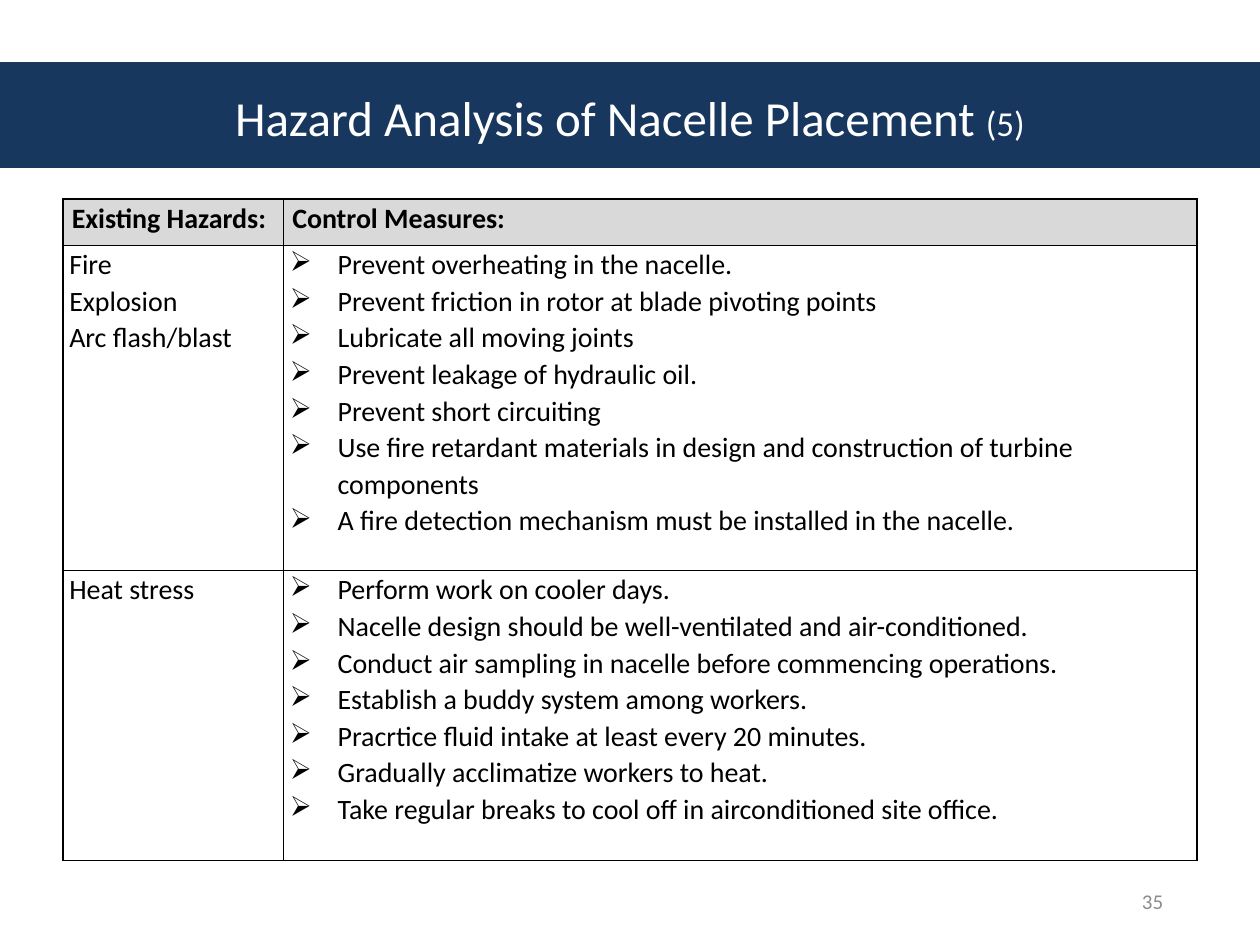
from dataclasses import dataclass

from lxml import etree
from pptx import Presentation
from pptx.dml.color import RGBColor
from pptx.enum.shapes import MSO_SHAPE
from pptx.enum.text import MSO_ANCHOR, PP_ALIGN
from pptx.oxml.ns import qn
from pptx.util import Inches, Pt

RECT = MSO_SHAPE.RECTANGLE
MIDDLE = MSO_ANCHOR.MIDDLE
LEFT, CENTER, RIGHT = PP_ALIGN.LEFT, PP_ALIGN.CENTER, PP_ALIGN.RIGHT

FONT = "Calibri"
COLORS = {
    "navy": "17375E",
    "white": "FFFFFF",
    "black": "000000",
    "header": "D9D9D9",
    "number": "8C8C8C",
}
COL_WIDTHS = [1.75, 7.25]
ROW_HEIGHTS = [0.37, 2.58, 2.3]
OUTER_LINE, INNER_LINE = 1, 0.5


@dataclass
class HazardRow:
    hazards: list[str]
    measures: list[str]


HEADINGS = ["Existing Hazards:", "Control Measures:"]
ROWS = [
    HazardRow(
        ["Fire", "Explosion", "Arc flash/blast"],
        [
            "Prevent overheating in the nacelle.",
            "Prevent friction in rotor at blade pivoting points",
            "Lubricate all moving joints",
            "Prevent leakage of hydraulic oil.",
            "Prevent short circuiting",
            "Use fire retardant materials in design and construction of turbine components",
            "A fire detection mechanism must be installed in the nacelle.",
        ],
    ),
    HazardRow(
        ["Heat stress"],
        [
            "Perform work on cooler days.",
            "Nacelle design should be well-ventilated and air-conditioned.",
            "Conduct air sampling in nacelle before commencing operations.",
            "Establish a buddy system among workers.",
            "Pracrtice fluid intake at least every 20 minutes.",
            "Gradually acclimatize workers to heat.",
            "Take regular breaks to cool off in airconditioned site office.",
        ],
    ),
]


def rgb(name: str) -> RGBColor:
    return RGBColor.from_string(COLORS[name])


def add_text(p, text: str, *, size: float = 16, color: str = "black",
             bold: bool = False, align=LEFT, spacing: float = 1.0) -> None:
    p.alignment = align
    p.line_spacing = spacing
    r = p.add_run()
    r.text = text
    r.font.name = FONT
    r.font.size = Pt(size)
    r.font.bold = bold
    r.font.color.rgb = rgb(color)


def add_box(s, left: float, top: float, width: float, height: float):
    tf = s.shapes.add_textbox(
        Inches(left), Inches(top), Inches(width), Inches(height)).text_frame
    tf.word_wrap = True
    tf.vertical_anchor = MIDDLE
    return tf.paragraphs[0]


def add_bullet(p) -> None:
    pPr = p._p.get_or_add_pPr()
    pPr.set("marL", str(Inches(0.38)))
    pPr.set("indent", str(-Inches(0.38)))
    etree.SubElement(pPr, qn("a:buChar"), char="➢")


def set_borders(cell, widths: dict[str, float]) -> None:
    tcPr = cell._tc.get_or_add_tcPr()
    for i, (side, width) in enumerate(widths.items()):
        ln = etree.Element(qn(f"a:ln{side}"), w=str(Pt(width)))
        fill = etree.SubElement(ln, qn("a:solidFill"))
        etree.SubElement(fill, qn("a:srgbClr"), val=COLORS["black"])
        tcPr.insert(i, ln)


def fill_cell(cell, lines: list[str], *, margin: float = 0.05, fill: str = "white",
              bold: bool = False, bullets: bool = False) -> None:
    cell.margin_left = cell.margin_right = Inches(margin)
    cell.margin_top = cell.margin_bottom = 0
    cell.fill.solid()
    cell.fill.fore_color.rgb = rgb(fill)
    tf = cell.text_frame
    for i, line in enumerate(lines):
        p = tf.add_paragraph() if i else tf.paragraphs[0]
        add_text(p, line, bold=bold, spacing=1.07)
        if bullets:
            add_bullet(p)


def add_hazard_table(s) -> None:
    table = s.shapes.add_table(
        len(ROW_HEIGHTS), len(COL_WIDTHS), Inches(0.5), Inches(1.58),
        Inches(sum(COL_WIDTHS)), Inches(sum(ROW_HEIGHTS))).table
    for column, width in zip(table.columns, COL_WIDTHS):
        column.width = Inches(width)
    for row, height in zip(table.rows, ROW_HEIGHTS):
        row.height = Inches(height)
    for c, heading in enumerate(HEADINGS):
        fill_cell(table.cell(0, c), [heading], margin=0.07, fill="header", bold=True)
    for r, row in enumerate(ROWS, start=1):
        fill_cell(table.cell(r, 0), row.hazards)
        fill_cell(table.cell(r, 1), row.measures, bullets=True)
    last_row, last_col = len(ROW_HEIGHTS) - 1, len(COL_WIDTHS) - 1
    for r in range(last_row + 1):
        for c in range(last_col + 1):
            outer = {"L": c == 0, "R": c == last_col, "T": r == 0, "B": r == last_row}
            set_borders(table.cell(r, c), {
                side: OUTER_LINE if edge else INNER_LINE for side, edge in outer.items()})


def main() -> None:
    prs = Presentation()
    prs.slide_width, prs.slide_height = Inches(10), Inches(7.5)
    s = prs.slides.add_slide(prs.slide_layouts[6])

    band = s.shapes.add_shape(RECT, 0, Inches(0.5), Inches(10), Inches(0.83))
    band.shadow.inherit = False
    band.fill.solid()
    band.fill.fore_color.rgb = rgb("navy")
    band.line.color.rgb = rgb("navy")
    band.line.width = Pt(0.75)

    title = add_box(s, 0.5, 0.3, 9, 1.25)
    add_text(title, "Hazard Analysis of Nacelle Placement ", size=28, color="white", align=CENTER)
    add_text(title, "(5)", size=20, color="white", align=CENTER)

    add_hazard_table(s)
    add_text(add_box(s, 7, 6.95, 2.33, 0.4), "35", size=12, color="number", align=RIGHT)
    prs.save("out.pptx")


if __name__ == "__main__":
    main()
